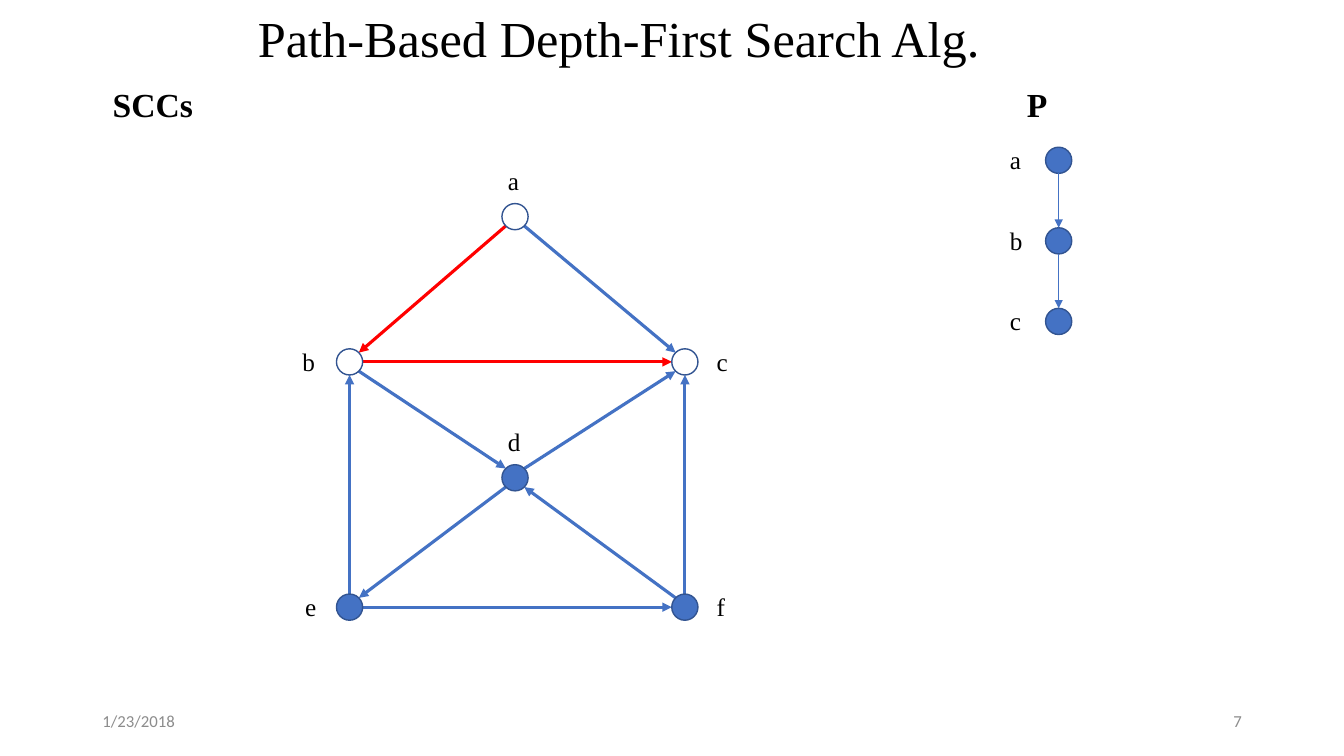
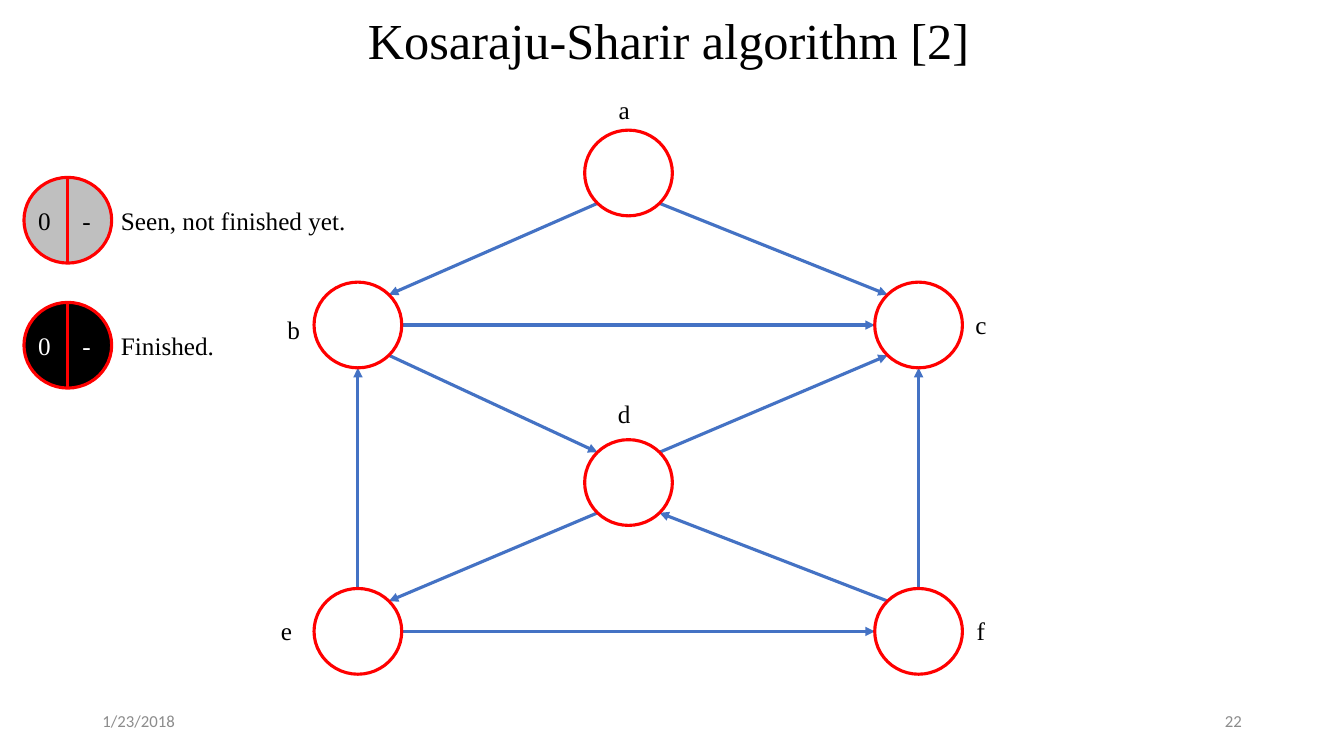
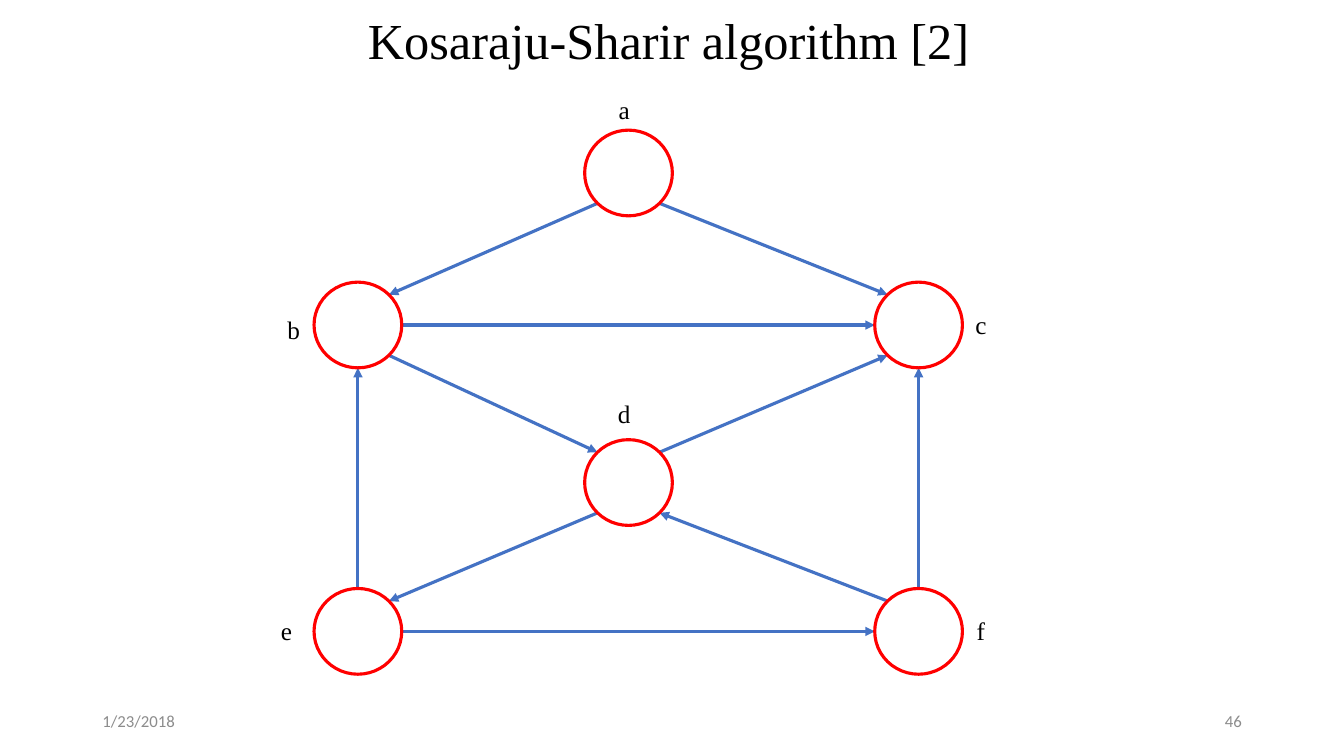
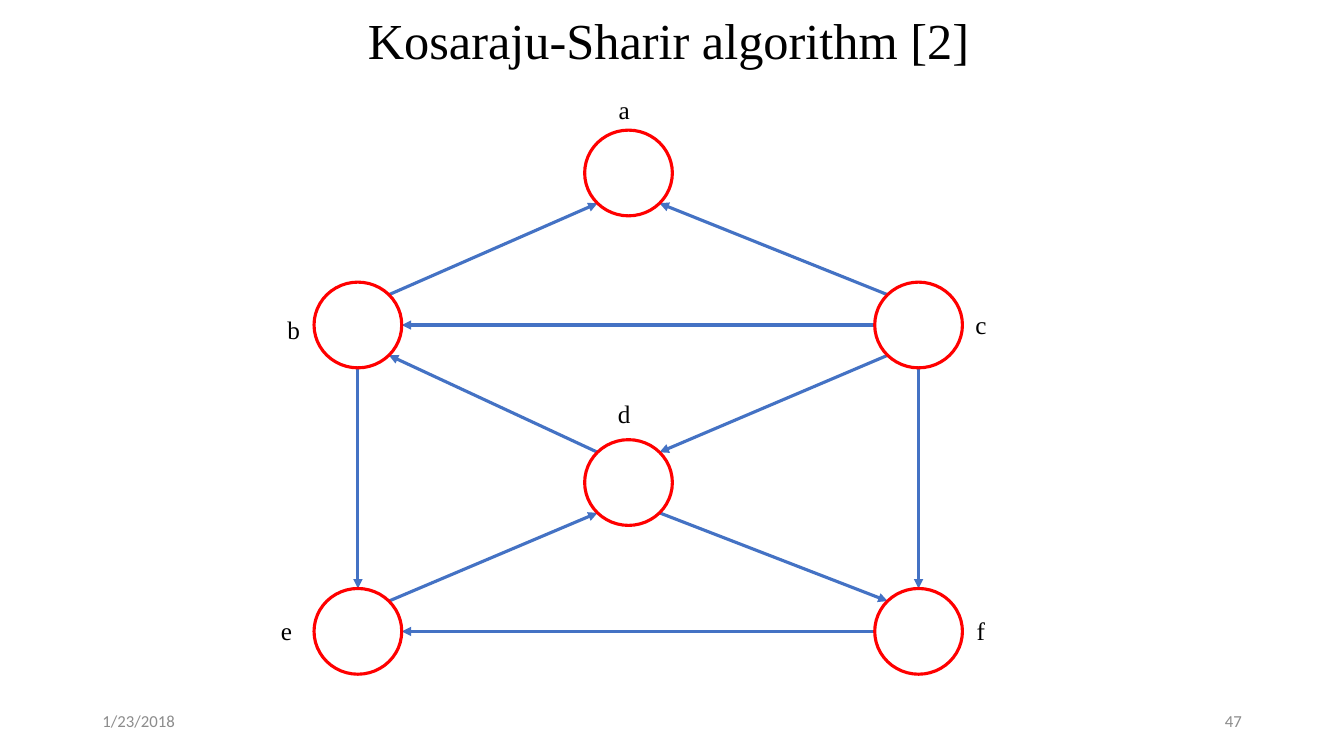
from itertools import pairwise
from math import sqrt

from lxml.etree import SubElement
from pptx import Presentation
from pptx.dml.color import RGBColor
from pptx.enum.shapes import MSO_CONNECTOR, MSO_SHAPE
from pptx.enum.text import MSO_ANCHOR, MSO_AUTO_SIZE, PP_ALIGN
from pptx.oxml.ns import qn
from pptx.util import Cm, Pt

BLUE, NAVY, RED = "4472C4", "325491", "FF0000"
BLACK, WHITE, GRAY, SILVER = "000000", "FFFFFF", "8C8C8C", "BFBFBF"
SERIF = "Times New Roman"

BODY = {"size": Pt(18), "name": SERIF}
HEAD = {"size": Pt(24), "name": SERIF, "bold": True}
TITLE = {"size": Pt(36), "name": SERIF}
FOOT = {"size": Pt(12), "name": "Calibri"}
GROW = {"word_wrap": False, "auto_size": MSO_AUTO_SIZE.SHAPE_TO_FIT_TEXT}
FIXED = {"word_wrap": True, "vertical_anchor": MSO_ANCHOR.MIDDLE}

DATE = "1/23/2018"
GRID = {"a": (1, 0), "b": (0, 1), "c": (2, 1),
        "d": (1, 2), "e": (0, 3), "f": (2, 3)}
EDGES = ["ab", "ac", "bc", "bd", "dc", "eb", "ef", "de", "fc", "fd"]
WIDTHS = {"a": 0.79, "b": 0.84, "c": 0.79, "d": 0.84, "e": 0.79, "f": 0.74,
          "0": 0.84, "-": 0.74}

SMALL = {
    "cols": (8.81, 12.98, 17.26),
    "rows": (5.46, 9.12, 12.04, 15.3),
    "size": (0.66, 0.66),
    "line": (NAVY, 1),
    "names": {"a": (12.55, 4.04), "b": (7.37, 8.59), "c": (17.81, 8.59),
              "d": (12.55, 10.62), "e": (7.44, 14.78), "f": (17.81, 14.78)},
}
LARGE = {
    "cols": (9.02, 15.84, 23.15),
    "rows": (4.36, 8.19, 12.16, 15.91),
    "size": (2.21, 2.16),
    "line": (RED, 2.25),
    "names": {"a": (15.34, 2.24), "b": (6.99, 7.8), "c": (24.33, 7.67),
              "d": (15.32, 9.91), "e": (6.83, 15.39), "f": (24.36, 15.39)},
}
STACK = {"x": 26.68, "top": 4.04, "step": 2.03, "items": "abc"}
HEADS = [("SCCs", 2.59, 2.57), ("P", 25.63, 1.04)]
KEYS = [("Seen, not finished yet.", 5.55, 6.32, SILVER, BLACK),
        ("Finished.", 8.7, 2.87, BLACK, WHITE)]
KEYX = 1.71

PATH = ("Path-Based Depth-First Search Alg.", 6.25, 0.05, 18.9)
KOSA = ("Kosaraju-Sharir algorithm [2]", 9.02, 0.1, 15.82)
SLIDES = [
    {"title": PATH, "page": "7", "graph": SMALL, "full": "def",
     "hot": ["ab", "bc"], "stack": True},
    {"title": KOSA, "page": "22", "graph": LARGE, "keys": True},
    {"title": KOSA, "page": "46", "graph": LARGE},
    {"title": KOSA, "page": "47", "graph": LARGE, "flip": True},
]


def rgb(code):
    return RGBColor.from_string(code)


def style(item, values):
    for name, value in values.items():
        setattr(item, name, value)


def write(shapes, text, box, font=BODY, color=BLACK, frame=GROW,
          align=PP_ALIGN.LEFT):
    body = shapes.add_textbox(*map(Cm, box)).text_frame
    style(body, frame)
    para = body.paragraphs[0]
    para.alignment = align
    run = para.add_run()
    run.text = text
    style(run.font, font)
    run.font.color.rgb = rgb(color)


def mark(shapes, text, left, top, color=BLACK):
    write(shapes, text, (left, top, WIDTHS[text], 1.02), color=color)


def stroke(line, color, width):
    line.color.rgb = rgb(color)
    line.width = Pt(width)


def circle(shapes, mid, size, line, fill=None):
    (x, y), (wide, high) = mid, size
    box = (x - wide / 2, y - high / 2, wide, high)
    oval = shapes.add_shape(MSO_SHAPE.OVAL, *map(Cm, box))
    oval.shadow.inherit = False
    if fill:
        oval.fill.solid()
        oval.fill.fore_color.rgb = rgb(fill)
    else:
        oval.fill.background()
    stroke(oval.line, *line)


def join(shapes, start, end, color, width, arrow=True):
    link = shapes.add_connector(MSO_CONNECTOR.STRAIGHT,
                                *map(Cm, (*start, *end)))
    stroke(link.line, color, width)
    if arrow:
        SubElement(link.line._get_or_add_ln(), qn("a:tailEnd"),
                   type="triangle")
    SubElement(link._element.spPr, qn("a:effectLst"))


def sign(num):
    return (num > 0) - (num < 0)


def rim(mid, goal, size):
    way = [sign(g - m) for m, g in zip(mid, goal)]
    norm = sqrt(sum(map(abs, way)))
    return [m + w * s / 2 / norm for m, w, s in zip(mid, way, size)]


def arrow(shapes, start, end, size, color, width):
    join(shapes, rim(start, end, size), rim(end, start, size), color, width)


def graph(shapes, plan, full="", hot=(), flip=False):
    mids = {name: (plan["cols"][col], plan["rows"][row])
            for name, (col, row) in GRID.items()}
    for edge in EDGES:
        tail, head = reversed(edge) if flip else edge
        color = RED if edge in hot else BLUE
        arrow(shapes, mids[tail], mids[head], plan["size"], color, 2.25)
    for name, mid in mids.items():
        circle(shapes, mid, plan["size"], plan["line"],
               BLUE if name in full else None)
        mark(shapes, name, *plan["names"][name])


def stack(shapes):
    for text, left, wide in HEADS:
        write(shapes, text, (left, 1.98, wide, 1.27), HEAD)
    x, size = STACK["x"], SMALL["size"]
    mids = [(x, STACK["top"] + i * STACK["step"])
            for i in range(len(STACK["items"]))]
    for name, mid in zip(STACK["items"], mids):
        circle(shapes, mid, size, SMALL["line"], BLUE)
        mark(shapes, name, 25.2, mid[1] - 0.52)
    for start, end in pairwise(mids):
        arrow(shapes, start, end, size, BLUE, 0.5)


def keys(shapes):
    size = LARGE["size"]
    half = size[1] / 2
    for text, y, wide, fill, color in KEYS:
        group = shapes.add_group_shape().shapes
        circle(group, (KEYX, y), size, LARGE["line"], fill)
        join(group, (KEYX, y - half), (KEYX, y + half), *LARGE["line"],
             arrow=False)
        mark(group, "0", 0.71, y - 0.51, color)
        mark(group, "-", 1.83, y - 0.51, color)
        write(shapes, text, (2.8, y - 0.51, wide, 1.02))


def frame(shapes, title, page):
    text, left, top, wide = title
    write(shapes, text, (left, top, wide, 1.8), TITLE)
    for word, x, align in ((DATE, 2.33, PP_ALIGN.LEFT),
                           (page, 23.93, PP_ALIGN.RIGHT)):
        write(shapes, word, (x, 17.66, 7.62, 1.01), FOOT, GRAY, FIXED, align)


def main():
    deck = Presentation()
    style(deck, {"slide_width": Cm(33.87), "slide_height": Cm(19.05)})
    for data in SLIDES:
        shapes = deck.slides.add_slide(deck.slide_layouts[6]).shapes
        graph(shapes, data["graph"], data.get("full", ""),
              data.get("hot", ()), data.get("flip", False))
        if data.get("stack"):
            stack(shapes)
        if data.get("keys"):
            keys(shapes)
        frame(shapes, data["title"], data["page"])
    deck.save("out.pptx")


if __name__ == "__main__":
    main()
